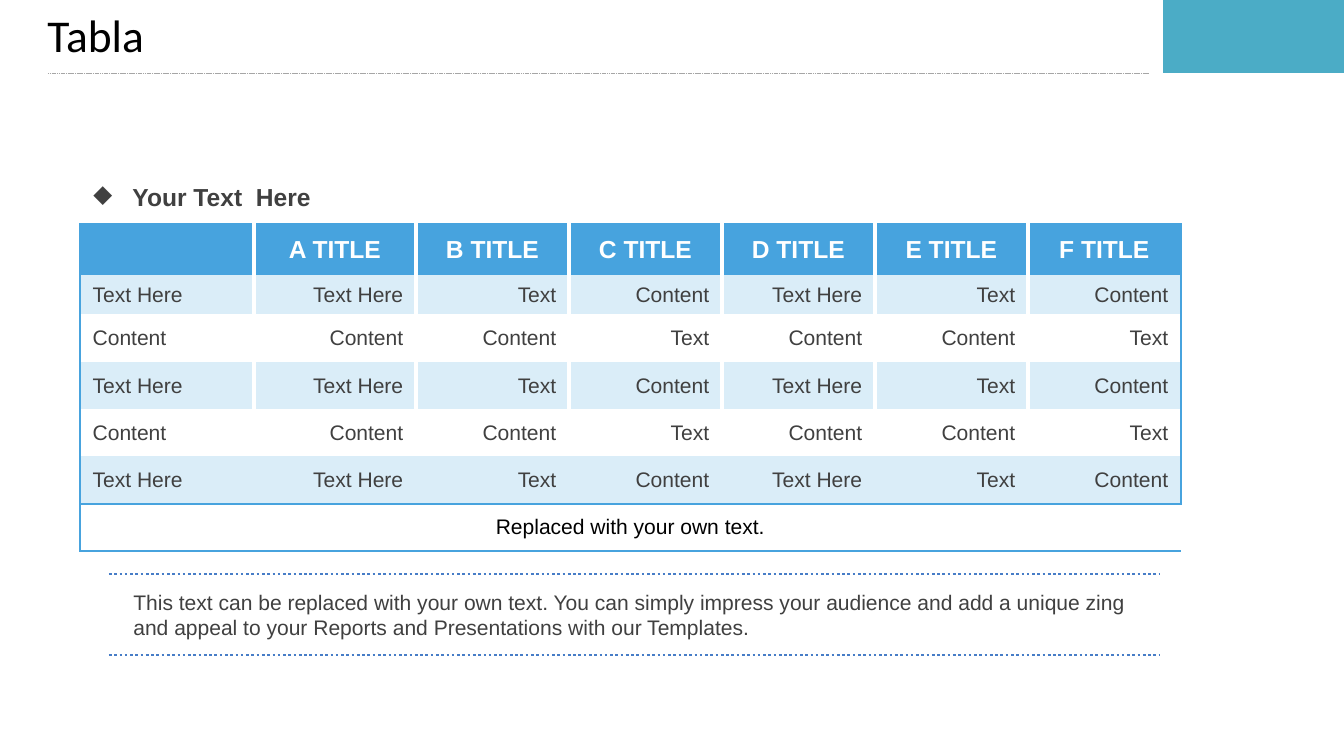
from lxml.etree import SubElement
from pptx import Presentation
from pptx.dml.color import RGBColor
from pptx.enum.dml import MSO_LINE
from pptx.enum.shapes import MSO_CONNECTOR, MSO_SHAPE
from pptx.enum.text import MSO_ANCHOR, PP_ALIGN
from pptx.oxml.ns import qn
from pptx.util import Pt

PX = 7234
COLORS = {
    "black": "000000", "white": "FFFFFF", "text": "404040", "teal": "4BACC6",
    "blue": "47A3DE", "pale": "DAEDF8", "dots": "477DC7", "rule": "A6A6A6",
}


def write(frame, text, size=12, color="text", font="Arial", bold=False,
          align=PP_ALIGN.LEFT, spacing=None):
    frame.word_wrap = True
    para = frame.paragraphs[0]
    para.alignment = align
    para.line_spacing = spacing
    span = para.add_run()
    span.text = text
    span.font.name = font
    span.font.size = Pt(size)
    span.font.bold = bold
    span.font.color.rgb = RGBColor.from_string(COLORS[color])
    return para


def set_border(cell, side, color=None, width=1):
    properties = cell._tc.get_or_add_tcPr()
    line = SubElement(properties, qn(f"a:ln{side}"), w=str(Pt(width)))
    if color:
        fill = SubElement(line, qn("a:solidFill"))
        SubElement(fill, qn("a:srgbClr"), val=COLORS[color])
    else:
        SubElement(line, qn("a:noFill"))


deck = Presentation()
deck.slide_width = 1344 * PX
deck.slide_height = 747 * PX
page = deck.slides.add_slide(deck.slide_layouts[6])

corner = page.shapes.add_shape(MSO_SHAPE.RECTANGLE, 1163 * PX, 0, 181 * PX, 73 * PX)
corner.shadow.inherit = False
corner.fill.solid()
corner.fill.fore_color.rgb = RGBColor.from_string(COLORS["teal"])
corner.line.fill.background()

for left, right, y, color, width, dash in [
    (48, 1149, 73, "rule", 0.25, MSO_LINE.SQUARE_DOT),
    (109, 1160, 574, "dots", 1.5, MSO_LINE.ROUND_DOT),
    (109, 1160, 655, "dots", 1.5, MSO_LINE.ROUND_DOT),
]:
    rule = page.shapes.add_connector(
        MSO_CONNECTOR.STRAIGHT, left * PX, y * PX, right * PX, y * PX)
    rule.line.color.rgb = RGBColor.from_string(COLORS[color])
    rule.line.width = Pt(width)
    rule.line.dash_style = dash
    SubElement(rule._element.spPr, qn("a:effectLst"))

header = [""] + [f"{letter} TITLE" for letter in "ABCDEF"]
odd_row = ["Text Here"] + ["Text Here", "Text", "Content"] * 2
even_row = ["Content"] + ["Content", "Content", "Text"] * 2
footer = ["Replaced with your own text."] + [""] * 6
rows = [header, odd_row, even_row, odd_row, even_row, odd_row, footer]
column_widths = [174, 162] + [153] * 5
row_heights = [46, 39, 48, 47, 47, 48, 47]
last_row, last_column = len(rows) - 1, len(header) - 1

table = page.shapes.add_table(
    len(rows), len(header), 80 * PX, 224 * PX,
    sum(column_widths) * PX, sum(row_heights) * PX).table
table.first_row = False
table.horz_banding = False
for column, width in zip(table.columns, column_widths):
    column.width = width * PX
for row, height in zip(table.rows, row_heights):
    row.height = height * PX
table.cell(last_row, 0).merge(table.cell(last_row, last_column))

for r, labels in enumerate(rows):
    inner = "white" if r < 4 else None
    for c, label in enumerate(labels):
        cell = table.cell(r, c)
        cell.vertical_anchor = MSO_ANCHOR.MIDDLE
        set_border(cell, "L", *(("blue", 1) if c == 0 else (inner, 2.25)))
        set_border(cell, "R", *(("blue", 1) if c == last_column else (inner, 2.25)))
        set_border(cell, "T", "blue" if r in (0, last_row) else None)
        set_border(cell, "B", "blue" if r >= last_row - 1 else None)
        if r == 0 or r % 2:
            cell.fill.solid()
            cell.fill.fore_color.rgb = RGBColor.from_string(COLORS["pale" if r else "blue"])
        else:
            cell.fill.background()
        if not label:
            continue
        if r == 0:
            style = {"size": 14, "color": "white", "bold": True, "align": PP_ALIGN.CENTER}
        elif r == last_row:
            style = {"color": "black", "align": PP_ALIGN.CENTER}
        else:
            style = {"align": PP_ALIGN.RIGHT if c else PP_ALIGN.LEFT}
        write(cell.text_frame, label, **style)

heading = page.shapes.add_textbox(81 * PX, 176 * PX, 298 * PX, 43 * PX)
para = write(heading.text_frame, "Your Text  Here", size=14, bold=True)
bullet_format = para._p.get_or_add_pPr()
bullet_format.set("marL", str(39 * PX))
bullet_format.set("indent", str(-39 * PX))
SubElement(bullet_format, qn("a:buChar"), char="◆")

note = page.shapes.add_textbox(121 * PX, 583 * PX, 1020 * PX, 63 * PX)
write(note.text_frame,
      "This text can be replaced with your own text. You can simply impress your "
      "audience and add a unique zing and appeal to your Reports and Presentations "
      "with our Templates.")

title = page.shapes.add_textbox(35 * PX, 11 * PX, 1073 * PX, 57 * PX)
title.text_frame.vertical_anchor = MSO_ANCHOR.MIDDLE
write(title.text_frame, "Tabla", size=25.9, color="black", font="Calibri", spacing=0.8)

deck.save("out.pptx")
